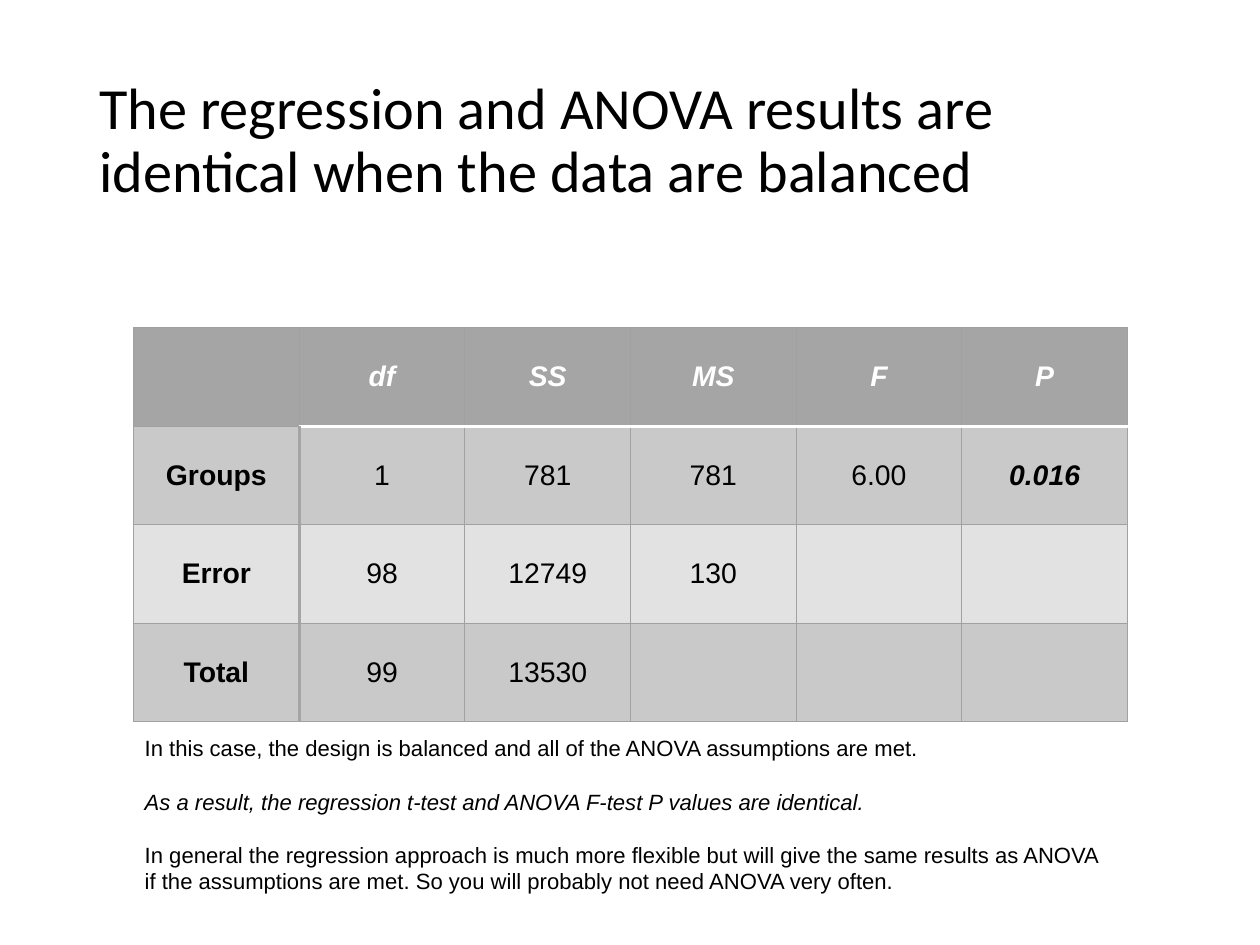
from lxml.etree import SubElement
from pptx import Presentation
from pptx.dml.color import RGBColor
from pptx.enum.text import MSO_ANCHOR as Anchor, MSO_AUTO_SIZE as AutoSize, PP_ALIGN as Align
from pptx.oxml.ns import qn
from pptx.util import Pt

BLACK = RGBColor(0x00, 0x00, 0x00)
WHITE = RGBColor(0xFF, 0xFF, 0xFF)
HEADER_GREY = RGBColor(0xA5, 0xA5, 0xA5)
BAND_GREY = RGBColor(0xC9, 0xC9, 0xC9)
PALE_GREY = RGBColor(0xE2, 0xE2, 0xE2)
GRID_GREY = RGBColor(0xA1, 0xA1, 0xA1)

TITLE = "The regression and ANOVA results are identical when the data are balanced"
ANOVA_ROWS = [
    ["", "df", "SS", "MS", "F", "P"],
    ["Groups", "1", "781", "781", "6.00", "0.016"],
    ["Error", "98", "12749", "130", "", ""],
    ["Total", "99", "13530", "", "", ""],
]
ROW_FILLS = [HEADER_GREY, BAND_GREY, PALE_GREY, BAND_GREY]
KEY_RESULT = "0.016"
# Each note is its text and whether it is italic.
NOTES = [
    ("In this case, the design is balanced and all of the ANOVA assumptions are met.", False),
    ("As a result, the regression t-test and ANOVA F-test P values are identical.", True),
    ("In general the regression approach is much more flexible but will give the same "
     "results as ANOVA if the assumptions are met. So you will probably not need ANOVA "
     "very often.", False),
]


def format_runs(para, font_name, size, color, bold=False, italic=False):
    for run in para.runs:
        font = run.font
        font.name, font.size, font.color.rgb = font_name, Pt(size), color
        font.bold, font.italic = bold, italic


def add_title(slide, left, top, width, height):
    title = slide.shapes.title
    title.left, title.top, title.width, title.height = Pt(left), Pt(top), Pt(width), Pt(height)
    frame = title.text_frame
    frame.text = TITLE
    frame.word_wrap = True
    frame.auto_size = AutoSize.NONE
    frame.vertical_anchor = Anchor.MIDDLE
    frame.margin_left = frame.margin_right = frame.margin_top = frame.margin_bottom = Pt(8)
    para = frame.paragraphs[0]
    para.alignment = Align.LEFT
    para.line_spacing = 0.9
    format_runs(para, "Calibri", 37, BLACK)


def set_borders(cell, borders):
    """Draw cell borders, given as (color, points) for left, right, top and bottom."""
    properties = cell._tc.get_or_add_tcPr()
    for side, (color, points) in zip("LRTB", borders):
        line = SubElement(properties, qn(f"a:ln{side}"), w=str(Pt(points)))
        fill = SubElement(line, qn("a:solidFill"))
        SubElement(fill, qn("a:srgbClr"), val=str(color))


def cell_borders(row, column):
    """Return the thin grid, with heavier rules beside the labels and under the header."""
    thin, label_rule, header_rule = (GRID_GREY, 0.75), (HEADER_GREY, 2), (WHITE, 2)
    left = label_rule if row > 0 and column == 1 else thin
    right = label_rule if row > 0 and column == 0 else thin
    top = header_rule if row == 1 and column > 0 else thin
    bottom = header_rule if row == 0 and column > 0 else thin
    return left, right, top, bottom


def add_anova_table(slide, left, top, width, height):
    row_count, column_count = len(ANOVA_ROWS), len(ANOVA_ROWS[0])
    table = slide.shapes.add_table(
        row_count, column_count, Pt(left), Pt(top), Pt(width), Pt(height)).table
    table.horz_banding = False
    for column in table.columns:
        column.width = Pt(width / column_count)
    for row in table.rows:
        row.height = Pt(height / row_count)
    for row, values in enumerate(ANOVA_ROWS):
        for column, value in enumerate(values):
            cell = table.cell(row, column)
            set_borders(cell, cell_borders(row, column))
            cell.fill.solid()
            cell.fill.fore_color.rgb = ROW_FILLS[row]
            cell.vertical_anchor = Anchor.MIDDLE
            cell.text = value
            para = cell.text_frame.paragraphs[0]
            para.alignment = Align.CENTER
            is_header, is_key = row == 0, value == KEY_RESULT
            format_runs(para, "Arial", 18, WHITE if is_header else BLACK,
                        bold=is_header or column == 0 or is_key,
                        italic=is_header or is_key)


def add_notes(slide, left, top, width, height):
    frame = slide.shapes.add_textbox(Pt(left), Pt(top), Pt(width), Pt(height)).text_frame
    frame.word_wrap = True
    frame.auto_size = AutoSize.SHAPE_TO_FIT_TEXT
    frame.text = "\n".join(text for text, _ in NOTES)
    for index, (para, (_, italic)) in enumerate(zip(frame.paragraphs, NOTES)):
        para.space_before = Pt(17 if index else 0)
        format_runs(para, "Arial", 14, BLACK, italic=italic)


def main():
    deck = Presentation()
    deck.slide_width, deck.slide_height = Pt(800), Pt(600)
    slide = deck.slides.add_slide(deck.slide_layouts.get_by_name("Title Only"))
    add_title(slide, 55, 32, 690, 116)
    add_anova_table(slide, 84.8, 208, 631, 250.4)
    add_notes(slide, 84.8, 463, 631, 112)
    deck.save("out.pptx")


if __name__ == "__main__":
    main()
